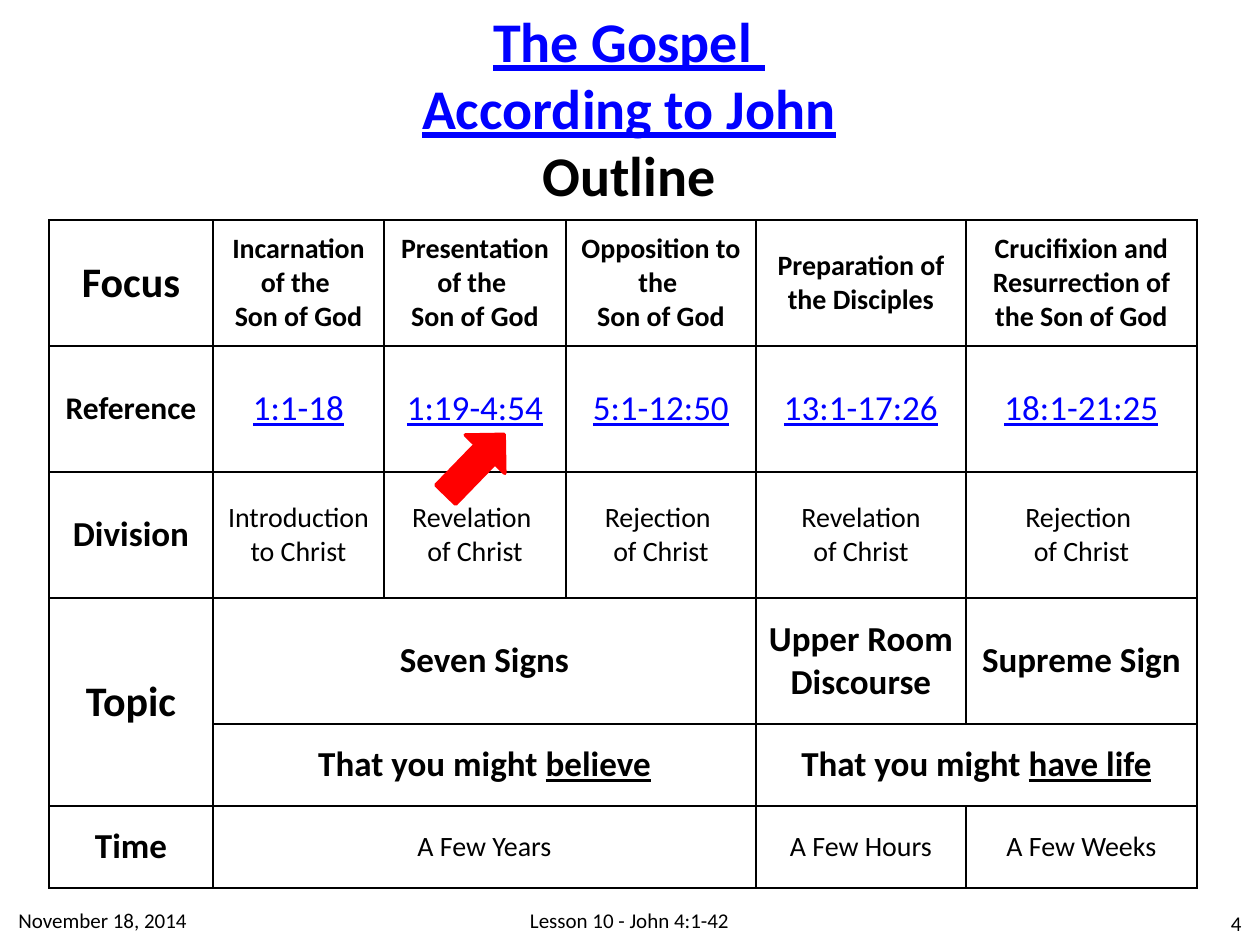
"""Build the outline slide for the Gospel According to John."""
from pptx import Presentation
from pptx.dml.color import RGBColor
from pptx.enum.shapes import MSO_SHAPE as Shape
from pptx.enum.text import MSO_ANCHOR as Anchor, MSO_AUTO_SIZE as AutoSize, PP_ALIGN as Align
from pptx.oxml import parse_xml
from pptx.oxml.ns import nsdecls
from pptx.util import Pt

SCALE = 914400 / 126
BLACK, BLUE, RED = "000000", "0000FF", "FF0000"


def px(*lengths):
    return [round(length * SCALE) for length in lengths]


def write(frame, text, size, bold=False, link=BLACK, align=Align.CENTER):
    """Write one paragraph per line, underlining the parts between underscores."""
    for number, line in enumerate(text.split("\n")):
        para = frame.add_paragraph() if number else frame.paragraphs[0]
        para.alignment = align
        for index, piece in enumerate(line.split("_")):
            if not piece:
                continue
            span = para.add_run()
            span.text = piece
            underline = index % 2 == 1
            look = {"name": "Calibri", "size": Pt(size), "bold": bold, "underline": underline}
            for key, value in look.items():
                setattr(span.font, key, value)
            span.font.color.rgb = RGBColor.from_string(link if underline else BLACK)


deck = Presentation()
deck.slide_width, deck.slide_height = px(1260, 945)
page = deck.slides.add_slide(deck.slide_layouts[5])

title = page.shapes.title
title.left, title.top, title.width, title.height = px(401, 0, 456, 217)
title_format = {"word_wrap": False, "auto_size": AutoSize.NONE, "vertical_anchor": Anchor.TOP}
for key, value in title_format.items():
    setattr(title.text_frame, key, value)
write(title.text_frame, "_The Gospel _\n_According to John_\nOutline", 32, True, BLUE)

widths = [164, 171, 182, 190, 210, 231]
heights = [126, 126, 126, 126, 82, 82]
headings = [("Focus", 24), ("Reference", 18), ("Division", 20), ("Topic", 24), None, ("Time", 20)]
rows = [
    (16, True, ["Incarnation of the \nSon of God", "Presentation of the \nSon of God",
                "Opposition to the \nSon of God", "Preparation of the Disciples",
                "Crucifixion and Resurrection of the Son of God"]),
    (20, False, ["_1:1-18_", "_1:19-4:54_", "_5:1-12:50_", "_13:1-17:26_", "_18:1-21:25_"]),
    (16, False, ["Introduction to Christ", "Revelation \nof Christ", "Rejection \nof Christ",
                 "Revelation\nof Christ", "Rejection \nof Christ"]),
    (20, True, ["Seven Signs", "", "", "Upper Room Discourse", "Supreme Sign"]),
    (20, True, ["That you might _believe_", "", "", "That you might _have life_", ""]),
    (16, False, ["A Few Years", "", "", "A Few Hours", "A Few Weeks"]),
]
merges = [(3, 0, 4, 0), (3, 1, 3, 3), (4, 1, 4, 3), (4, 4, 4, 5), (5, 1, 5, 3)]

table = page.shapes.add_table(len(heights), len(widths),
                              *px(49, 220, sum(widths), sum(heights))).table
table.first_row = table.horz_banding = False
for column, width in zip(table.columns, px(*widths)):
    column.width = width
for row, height in zip(table.rows, px(*heights)):
    row.height = height

for cell in table.iter_cells():
    cell.vertical_anchor = Anchor.MIDDLE
    for side in "LRTB":
        cell._tc.get_or_add_tcPr().append(parse_xml(
            f'<a:ln{side} {nsdecls("a")} w="12700"><a:solidFill>'
            f'<a:srgbClr val="{BLACK}"/></a:solidFill></a:ln{side}>'))
    cell.fill.background()

for top, left, bottom, right in merges:
    table.cell(top, left).merge(table.cell(bottom, right))

for number, (heading, (size, bold, texts)) in enumerate(zip(headings, rows)):
    if heading:
        write(table.cell(number, 0).text_frame, *heading, bold=True)
    link = BLACK if bold else BLUE
    for column, text in enumerate(texts, 1):
        if text:
            write(table.cell(number, column).text_frame, text, size, bold, link)

footers = [
    ("Lesson 10 - John 4:1-42", (215, 895, 829, 50), Align.CENTER),
    ("November 18, 2014", (6, 895, 256, 50), Align.LEFT),
    ("4", (1159, 898, 95, 50), Align.RIGHT),
]
for text, place, align in footers:
    frame = page.shapes.add_textbox(*px(*place)).text_frame
    frame.word_wrap = True
    frame.vertical_anchor = Anchor.MIDDLE
    write(frame, text, 12, align=align)

arrow = page.shapes.add_shape(Shape.RIGHT_ARROW, *px(433, 437, 84, 55))
arrow.rotation = 314.1
arrow.shadow.inherit = False
arrow.fill.solid()
arrow.fill.fore_color.rgb = arrow.line.color.rgb = RGBColor.from_string(RED)
arrow.line.width = Pt(2)

deck.save("out.pptx")
